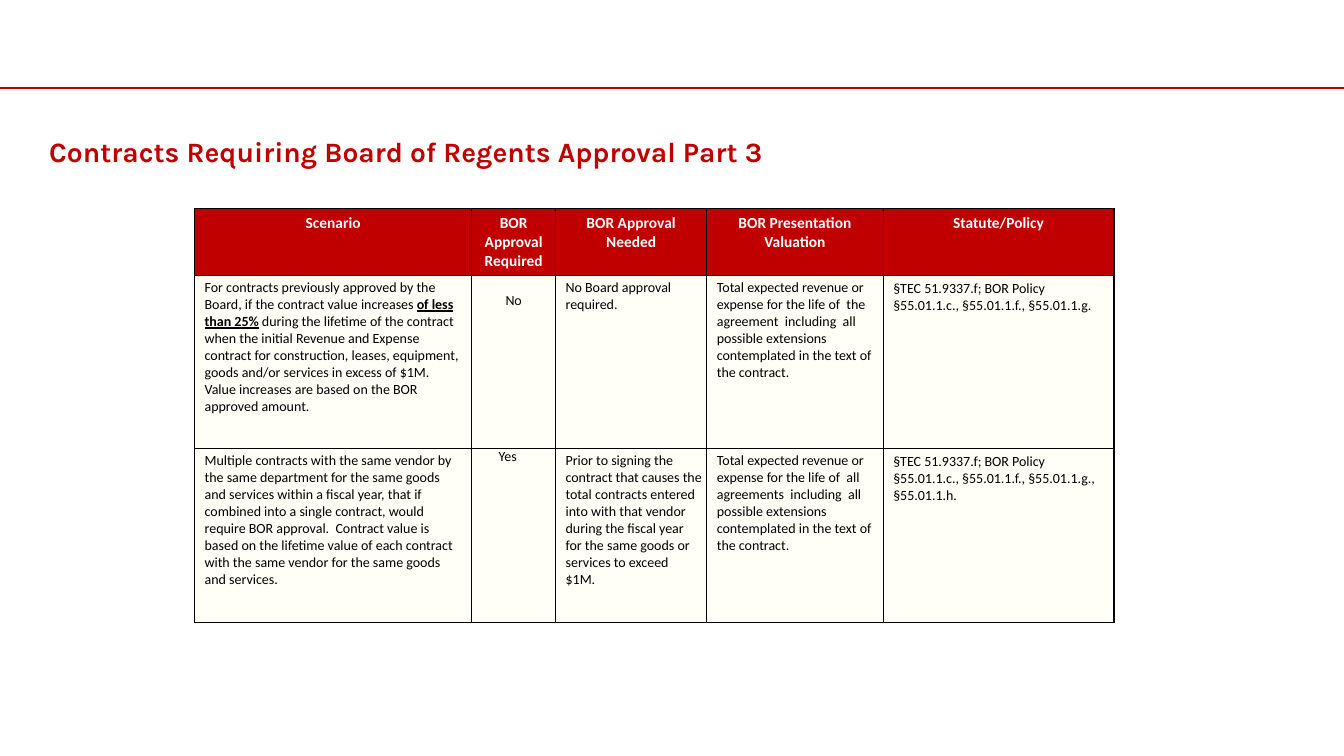
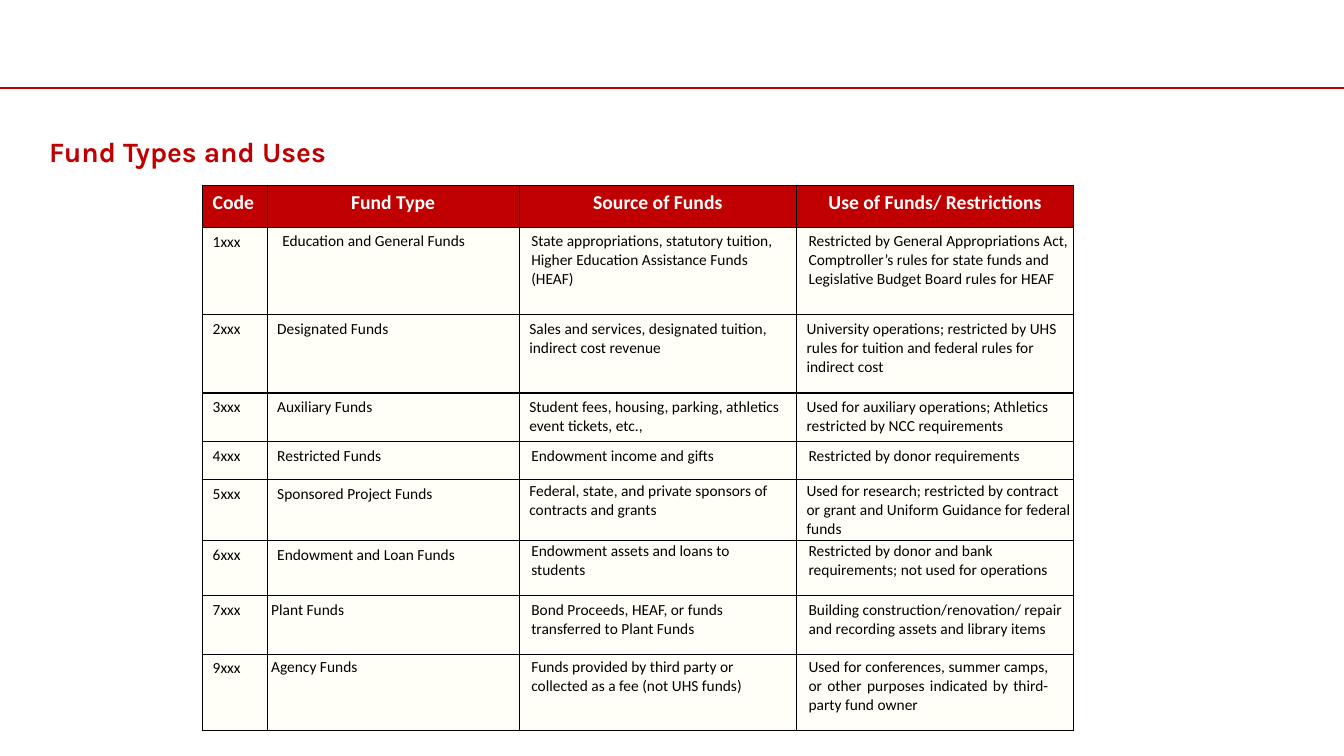
from dataclasses import dataclass

import pptx
import pptx.dml.color
import pptx.enum.shapes
import pptx.enum.text
import pptx.oxml
import pptx.oxml.ns
import pptx.util
from lxml import etree

Inches = pptx.util.Inches
Pt = pptx.util.Pt
RGBColor = pptx.dml.color.RGBColor
ALIGN = pptx.enum.text.PP_ALIGN

RED = RGBColor(0xC0, 0x00, 0x00)
CREAM = RGBColor(0xFF, 0xFE, 0xF7)
BLACK = RGBColor(0x00, 0x00, 0x00)
WHITE = RGBColor(0xFF, 0xFF, 0xFF)
TITLE_FONT = "Karla"
TABLE_FONT = "Calibri"
SLIDE_WIDTH = 13.33


@dataclass
class Entry:
    text: str
    left: float = 0.1
    top: float = 0.05
    right: float = 0.1
    align: ALIGN = ALIGN.LEFT
    emphasis: str = ""


def add_run(paragraph, text, font, size, color, bold=False, underline=False):
    run = paragraph.add_run()
    run.text = text
    run.font.name = font
    run.font.size = Pt(size)
    run.font.color.rgb = color
    run.font.bold = bold
    if underline:
        run.font.underline = True


def add_titled_slide(prs, title):
    slide = prs.slides.add_slide(prs.slide_layouts[6])
    rule = slide.shapes.add_connector(
        pptx.enum.shapes.MSO_CONNECTOR.STRAIGHT,
        0, Inches(0.87), Inches(SLIDE_WIDTH), Inches(0.87))
    rule.line.color.rgb = RED
    rule.line.width = Pt(1.5)
    etree.SubElement(rule._element.spPr, pptx.oxml.ns.qn("a:effectLst"))
    heading = slide.shapes.add_textbox(
        Inches(0.39), Inches(1.29), Inches(12.56), Inches(0.57)).text_frame
    heading.word_wrap = True
    add_run(heading.paragraphs[0], title, TITLE_FONT, 20, RED, bold=True)
    return slide


def add_borders(cell):
    properties = cell._tc.get_or_add_tcPr()
    for position, side in enumerate(("lnL", "lnR", "lnT", "lnB")):
        properties.insert(position, pptx.oxml.parse_xml(
            f'<a:{side} {pptx.oxml.ns.nsdecls("a")} w="12700">'
            f'<a:solidFill><a:srgbClr val="{BLACK}"/></a:solidFill></a:{side}>'))


def fill_cell(cell, entry, size, color, background, bold=False):
    cell.margin_left = Inches(entry.left)
    cell.margin_top = Inches(entry.top)
    cell.margin_right = Inches(entry.right)
    cell.margin_bottom = 0
    cell.fill.solid()
    cell.fill.fore_color.rgb = background
    add_borders(cell)
    frame = cell.text_frame
    for index, line in enumerate(entry.text.split("\n")):
        paragraph = frame.add_paragraph() if index else frame.paragraphs[0]
        paragraph.alignment = entry.align
        before, marked, after = line.partition(entry.emphasis) if entry.emphasis else (line, "", "")
        for part in filter(None, (before, marked, after)):
            stressed = bool(marked) and part == marked
            add_run(paragraph, part, TABLE_FONT, size, color, bold or stressed, stressed)


def add_policy_table(slide, left, top, widths, heights, headers, rows, header_size, body_size):
    table = slide.shapes.add_table(
        len(heights), len(widths), Inches(left), Inches(top),
        Inches(sum(widths)), Inches(sum(heights))).table
    for column, width in zip(table.columns, widths):
        column.width = Inches(width)
    for row, height in zip(table.rows, heights):
        row.height = Inches(height)
    for column, header in enumerate(headers):
        fill_cell(table.cell(0, column), header, header_size, WHITE, RED, bold=True)
    for number, row in enumerate(rows, 1):
        for column, entry in enumerate(row):
            fill_cell(table.cell(number, column), entry, body_size, BLACK, CREAM)


def centered(*labels):
    return [Entry(label, align=ALIGN.CENTER) for label in labels]


def scenario(text, emphasis=""):
    return Entry(text, top=0.04, emphasis=emphasis)


def detail(text):
    return Entry(text, top=0.04, right=0.05)


def fund_row(code, fund, source, use, left=0.12, top=0.05, right=0.1, fund_left=0.1, fund_top=0.05):
    return [Entry(code), Entry(fund, fund_left, fund_top),
            Entry(source, left, top, right), Entry(use, left, top, right)]


def build_approval_slide(prs):
    slide = add_titled_slide(prs, "Contracts Requiring Board of Regents Approval Part 3")
    rows = [
        [scenario("For contracts previously approved by the Board, if the contract value increases "
                  "of less than 25% during the lifetime of the contract when the initial Revenue and "
                  "Expense contract for construction, leases, equipment, goods and/or services in "
                  "excess of $1M. Value increases are based on the BOR approved amount.",
                  "of less than 25%"),
         Entry("No", 0, 0.17, 0, ALIGN.CENTER),
         detail("No Board approval required."),
         detail("Total expected revenue or expense for the life of  the  agreement  including  all  "
                "possible extensions contemplated in the text of the contract."),
         Entry("§TEC 51.9337.f; BOR Policy §55.01.1.c., §55.01.1.f., §55.01.1.g.")],
        [scenario("Multiple contracts with the same vendor by the same department for the same goods "
                  "and services within a fiscal year, that if combined into a single contract, would "
                  "require BOR approval.  Contract value is based on the lifetime value of each "
                  "contract with the same vendor for the same goods and services."),
         Entry("Yes", 0, 0, 0.12, ALIGN.CENTER),
         detail("Prior to signing the contract that causes the total contracts entered into with "
                "that vendor during the fiscal year for the same goods or services to exceed\n$1M."),
         detail("Total expected revenue or expense for the life of  all  agreements  including  all  "
                "possible extensions contemplated in the text of the contract."),
         Entry("§TEC 51.9337.f; BOR Policy §55.01.1.c., §55.01.1.f., §55.01.1.g., §55.01.1.h.")],
    ]
    headers = centered("Scenario", "BOR Approval Required", "BOR Approval Needed",
                       "BOR Presentation Valuation", "Statute/Policy")
    add_policy_table(slide, 1.93, 2.07, [2.75, 0.83, 1.5, 1.75, 2.29], [0.66, 1.72, 1.73],
                     headers, rows, 11, 10)


def build_funds_slide(prs):
    slide = add_titled_slide(prs, "Fund Types and Uses")
    rows = [
        fund_row("1xxx", "Education and General Funds",
                 "State appropriations, statutory tuition,\nHigher Education Assistance Funds (HEAF)",
                 "Restricted by General Appropriations Act,\nComptroller’s rules for state funds and "
                 "Legislative Budget Board rules for HEAF",
                 top=0.04, right=0.05, fund_left=0.15, fund_top=0.04),
        fund_row("2xxx", "Designated Funds",
                 "Sales and services, designated tuition, indirect cost revenue",
                 "University operations; restricted by UHS rules for tuition and federal rules for "
                 "indirect cost", left=0.1),
        fund_row("3xxx", "Auxiliary Funds",
                 "Student fees, housing, parking, athletics event tickets, etc.,",
                 "Used for auxiliary operations; Athletics restricted by NCC requirements", left=0.1),
        fund_row("4xxx", "Restricted Funds", "Endowment income and gifts",
                 "Restricted by donor requirements"),
        fund_row("5xxx", "Sponsored Project Funds",
                 "Federal, state, and private sponsors of contracts and grants",
                 "Used for research; restricted by contract or grant and Uniform Guidance for "
                 "federal funds", left=0.1, top=0.02, right=0),
        fund_row("6xxx", "Endowment and Loan Funds", "Endowment assets and loans to students",
                 "Restricted by donor and bank requirements; not used for operations",
                 top=0.01, right=0.2),
        fund_row("7xxx", "Plant Funds", "Bond Proceeds, HEAF, or funds transferred to Plant Funds",
                 "Building construction/renovation/ repair and recording assets and library items",
                 fund_left=0.04),
        fund_row("9xxx", "Agency Funds",
                 "Funds provided by third party or collected as a fee (not UHS funds)",
                 "Used for conferences, summer camps, or other purposes indicated by third-party "
                 "fund owner", top=0.04, right=0.25, fund_left=0.04, fund_top=0.04),
    ]
    rows[-1][-1].align = ALIGN.JUSTIFY
    headers = [Entry("Code"), *centered("Fund Type", "Source of Funds", "Use of Funds/ Restrictions")]
    add_policy_table(slide, 2.01, 1.84, [0.64, 2.5, 2.75, 2.75],
                     [0.42, 0.86, 0.78, 0.48, 0.38, 0.6, 0.55, 0.58, 0.76],
                     headers, rows, 14, 11)


def main():
    prs = pptx.Presentation()
    prs.slide_width = Inches(SLIDE_WIDTH)
    prs.slide_height = Inches(7.5)
    build_approval_slide(prs)
    build_funds_slide(prs)
    prs.save("out.pptx")


if __name__ == "__main__":
    main()
